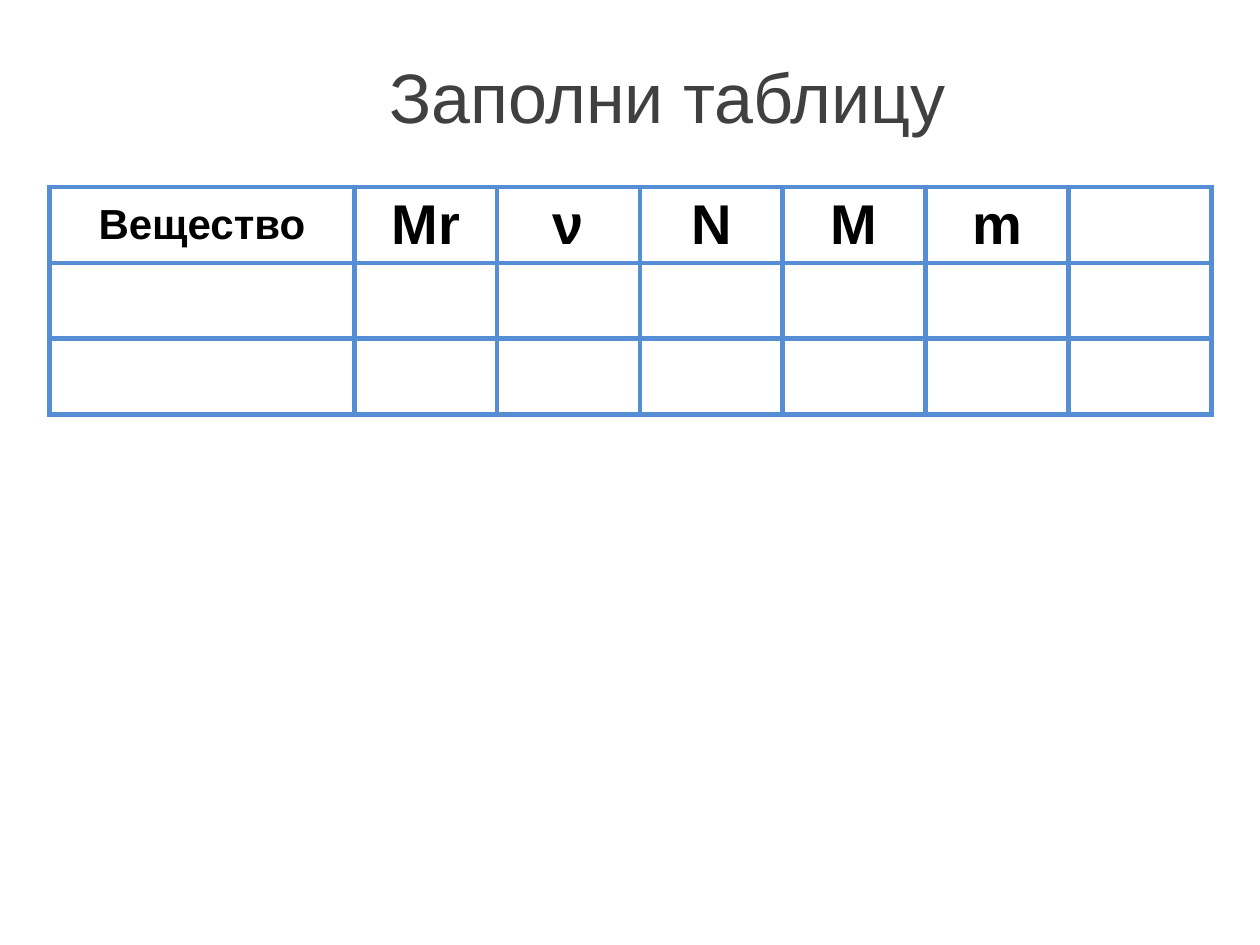
from dataclasses import dataclass

from lxml import etree
from pptx import Presentation
from pptx.dml.color import RGBColor
from pptx.enum import text as t
from pptx.oxml import ns
from pptx.util import Cm, Pt

FONT = "Arial"
BORDER = "558ED5"
BORDER_WIDTH = 3
ROW_COUNT = 3
ROW_HEIGHT = Cm(1.53)


@dataclass(frozen=True)
class Column:
    heading: str
    width: float = 2.88
    size: int = 32


COLUMNS = [
    Column("Вещество", 6.14, 24),
    *(Column(symbol) for symbol in ("Mr", "ν", "N", "M", "m", "")),
]


def color(hex_code: str) -> RGBColor:
    return RGBColor.from_string(hex_code)


def write(frame, content: str, size: int, hex_code: str, bold: bool = False):
    frame.vertical_anchor = t.MSO_ANCHOR.MIDDLE
    paragraph = frame.paragraphs[0]
    paragraph.alignment = t.PP_ALIGN.CENTER
    run = paragraph.add_run()
    run.text = content
    run.font.name = FONT
    run.font.size = Pt(size)
    run.font.bold = bold
    run.font.color.rgb = color(hex_code)
    return paragraph


def outline(cell) -> None:
    properties = cell._tc.get_or_add_tcPr()
    for position, side in enumerate(("lnL", "lnR", "lnT", "lnB")):
        edge = etree.Element(ns.qn(f"a:{side}"), w=str(Pt(BORDER_WIDTH)))
        fill = etree.SubElement(edge, ns.qn("a:solidFill"))
        etree.SubElement(fill, ns.qn("a:srgbClr"), val=BORDER)
        properties.insert(position, edge)


def add_heading(slide) -> None:
    heading = slide.shapes.title
    heading.left, heading.top = Cm(4.95), Cm(1.19)
    heading.width, heading.height = Cm(17), Cm(1.7)
    frame = heading.text_frame
    frame.word_wrap = True
    frame.auto_size = t.MSO_AUTO_SIZE.NONE
    frame.margin_left = frame.margin_right = Cm(0.2)
    frame.margin_top = frame.margin_bottom = Cm(0.15)
    paragraph = write(frame, "Заполни таблицу", 40, "404040")
    paragraph.line_spacing = 0.9


def add_substances(slide) -> None:
    total_width = Cm(sum(column.width for column in COLUMNS))
    substances = slide.shapes.add_table(
        ROW_COUNT, len(COLUMNS), Cm(1), Cm(3.77), total_width, ROW_HEIGHT * ROW_COUNT
    ).table
    substances.first_row = False
    substances.horz_banding = False
    for row in substances.rows:
        row.height = ROW_HEIGHT
    for index, column in enumerate(COLUMNS):
        substances.columns[index].width = Cm(column.width)
        if column.heading:
            header = substances.cell(0, index)
            header.vertical_anchor = t.MSO_ANCHOR.MIDDLE
            write(header.text_frame, column.heading, column.size, "000000", bold=True)
    for cell in substances.iter_cells():
        cell.fill.background()
        outline(cell)


def main() -> None:
    deck = Presentation()
    deck.slide_width, deck.slide_height = Cm(25.4), Cm(19.05)
    slide = deck.slides.add_slide(deck.slide_layouts[5])
    add_heading(slide)
    add_substances(slide)
    deck.save("out.pptx")


if __name__ == "__main__":
    main()
